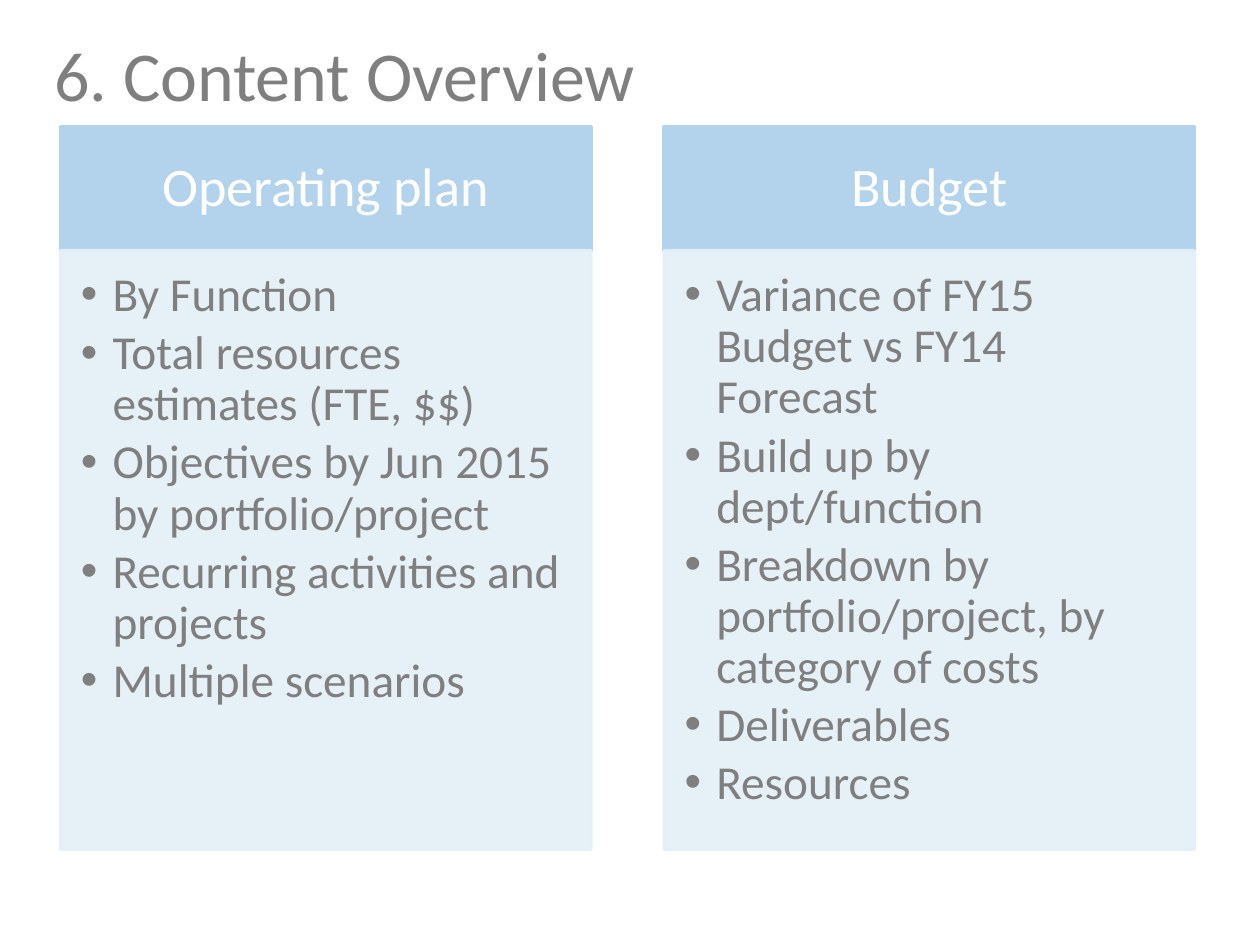
from lxml.etree import SubElement
from pptx import Presentation
from pptx.dml.color import RGBColor
from pptx.enum.text import MSO_ANCHOR, MSO_AUTO_SIZE, PP_ALIGN
from pptx.oxml.ns import qn
from pptx.util import Cm, Pt

COLORS = {
    "heading": "B2D3EB",
    "panel": "E4EFF7",
    "white": "FFFFFF",
    "grey": "7F7F7F",
}
FONT = "Calibri"
COMPARISON_LAYOUT = 4

# Column grid, in centimetres
LEFT, PITCH, WIDTH = 1.22, 12.17, 10.69
HEADING_TOP, HEADING_HEIGHT = 2.56, 2.49
LIST_TOP, LIST_HEIGHT = HEADING_TOP + HEADING_HEIGHT, 12.07

COLUMNS = [
    ("Operating plan", [
        "By Function",
        "Total resources estimates (FTE, $$)",
        "Objectives by Jun 2015 by portfolio/project",
        "Recurring activities and projects",
        "Multiple scenarios",
    ]),
    ("Budget", [
        "Variance of FY15 Budget vs FY14 Forecast",
        "Build up by dept/function",
        "Breakdown by portfolio/project, by category of costs",
        "Deliverables",
        "Resources",
    ]),
]


def place(shape, left, top, width, height):
    shape.left, shape.top = Cm(left), Cm(top)
    shape.width, shape.height = Cm(width), Cm(height)


def set_text(shape, lines, size, color, anchor, align, space_after=0, spacing=1.0):
    text_frame = shape.text_frame
    text_frame.text = "\n".join(lines)
    text_frame.word_wrap = True
    text_frame.auto_size = MSO_AUTO_SIZE.NONE
    text_frame.vertical_anchor = anchor
    for paragraph in text_frame.paragraphs:
        paragraph.alignment = align
        paragraph.line_spacing = spacing
        paragraph.space_before = Pt(0)
        paragraph.space_after = Pt(space_after)
        for run in paragraph.runs:
            run.font.name = FONT
            run.font.size = Pt(size)
            run.font.bold = False
            run.font.color.rgb = RGBColor.from_string(COLORS[color])


def set_margins(shape, left, top, right, bottom):
    text_frame = shape.text_frame
    text_frame.margin_left, text_frame.margin_top = Cm(left), Cm(top)
    text_frame.margin_right, text_frame.margin_bottom = Cm(right), Cm(bottom)


def paint(shape, color, opacity=100):
    for fill in (shape.fill, shape.line.fill):
        fill.solid()
        fill.fore_color.rgb = RGBColor.from_string(COLORS[color])
    shape.line.width = Pt(2)
    if opacity < 100:
        for color_element in shape._element.spPr.iter(qn("a:srgbClr")):
            SubElement(color_element, qn("a:alpha"), val=str(opacity * 1000))


def format_title(shape, text):
    place(shape, 0.84, 0.43, 23.7, 2.11)
    set_text(shape, [text], 40, "grey", MSO_ANCHOR.MIDDLE, PP_ALIGN.LEFT)


def format_heading(shape, left, text):
    place(shape, left, HEADING_TOP, WIDTH, HEADING_HEIGHT)
    paint(shape, "heading")
    set_margins(shape, 0.61, 0.36, 0.61, 0.36)
    set_text(shape, [text], 31, "white", MSO_ANCHOR.MIDDLE, PP_ALIGN.CENTER,
             spacing=0.9)


def format_list(shape, left, items):
    place(shape, left, LIST_TOP, WIDTH, LIST_HEIGHT)
    paint(shape, "panel", opacity=90)
    set_margins(shape, 0.41, 0.41, 0.53, 0.61)
    set_text(shape, items, 27, "grey", MSO_ANCHOR.TOP, PP_ALIGN.LEFT,
             space_after=4, spacing=0.9)
    # Hanging indent and bullet
    for paragraph in shape.text_frame.paragraphs:
        properties = paragraph._p.get_or_add_pPr()
        properties.set("marL", str(Cm(0.64)))
        properties.set("indent", str(Cm(-0.64)))
        SubElement(properties, qn("a:buChar"), char="•")


def main():
    presentation = Presentation()
    presentation.slide_width, presentation.slide_height = Cm(25.4), Cm(19.05)
    layout = presentation.slide_layouts[COMPARISON_LAYOUT]
    slide = presentation.slides.add_slide(layout)

    # The layout holds a title, then a heading and a list for each column
    title, *boxes = slide.placeholders
    for index, (heading, items) in enumerate(COLUMNS):
        left = LEFT + index * PITCH
        format_heading(boxes[2 * index], left, heading)
        format_list(boxes[2 * index + 1], left, items)
    format_title(title, "6. Content Overview")

    presentation.save("out.pptx")


if __name__ == "__main__":
    main()
